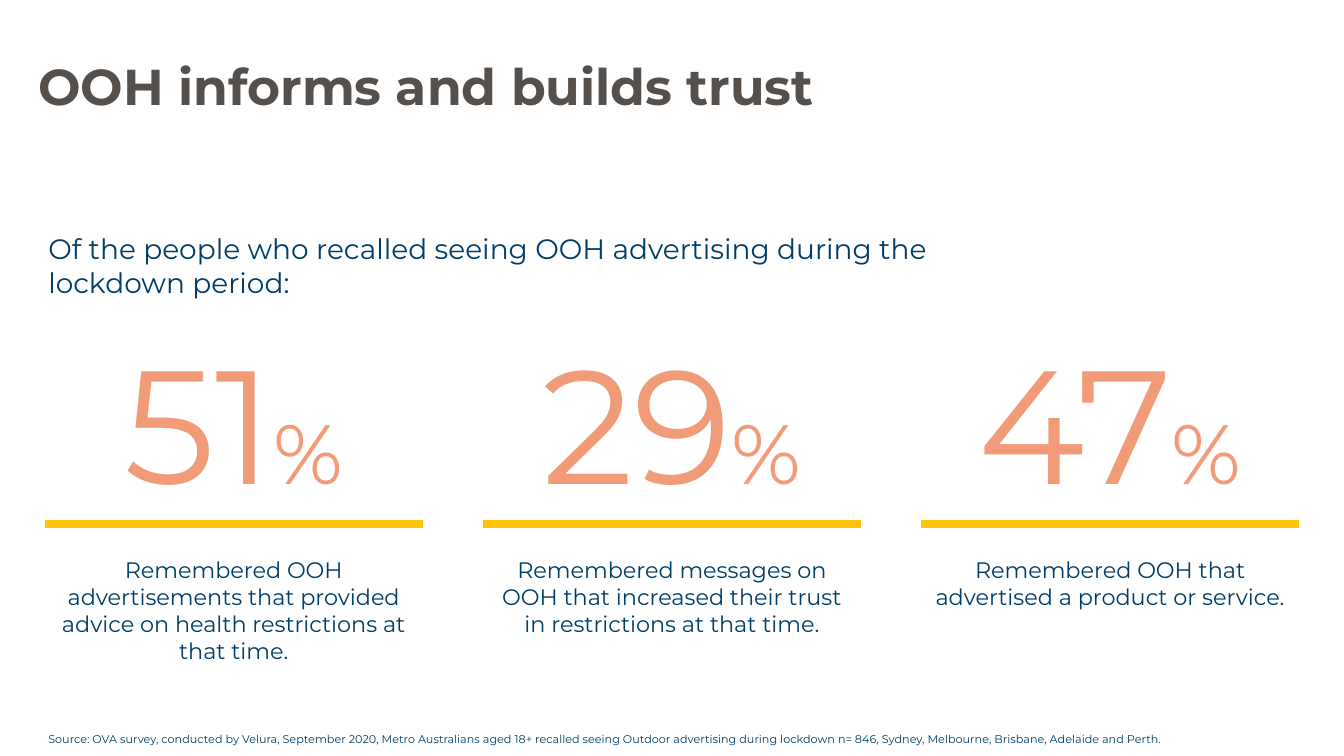
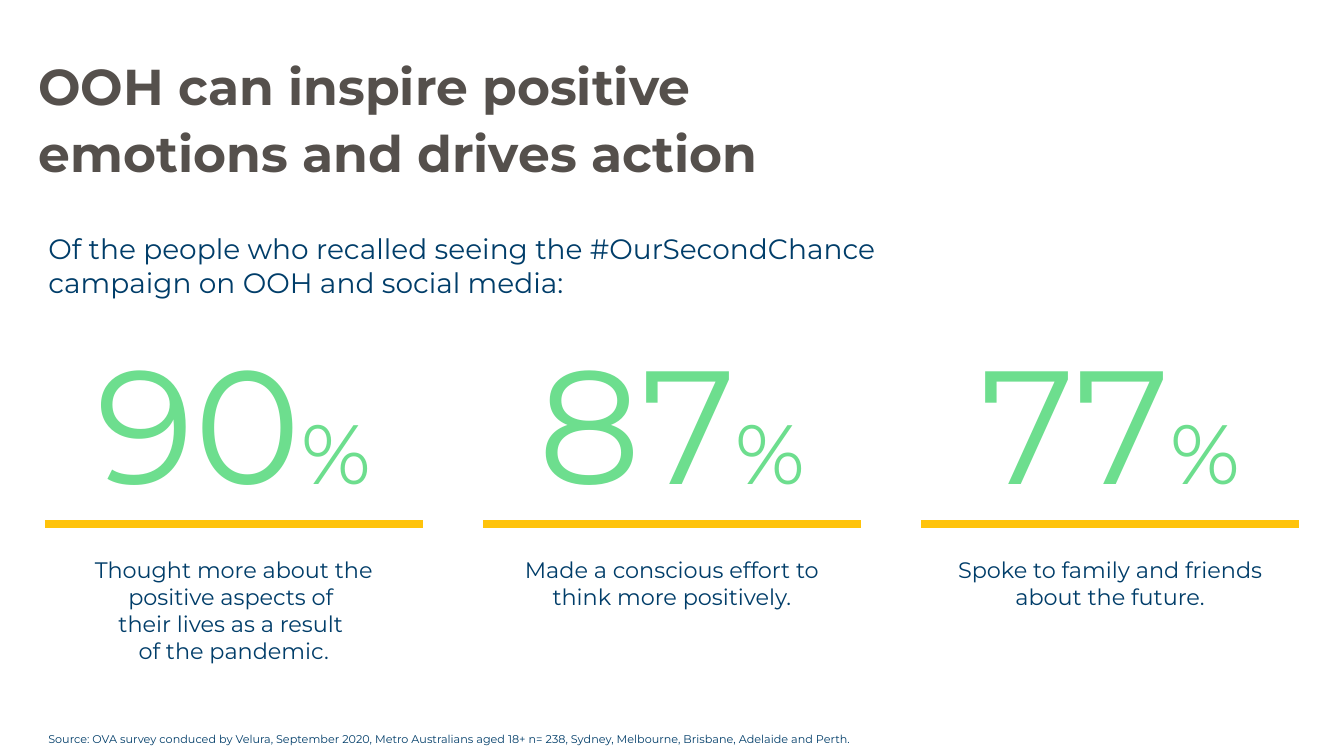
import copy
from dataclasses import dataclass

import pptx
import pptx.dml.color
import pptx.enum.shapes
import pptx.enum.text
import pptx.oxml.ns
import pptx.util
from lxml import etree

Pt = pptx.util.Pt
ALIGN = pptx.enum.text.PP_ALIGN


@dataclass(frozen=True)
class Theme:
    font: str = "Montserrat"
    title_color: str = "55504C"
    text_color: str = "003D69"
    rule_color: str = "FFC30B"
    coral: str = "F19B79"
    green: str = "6DDE8E"
    title_size: float = 36
    intro_size: float = 20
    caption_size: float = 16
    source_size: float = 8
    figure_size: float = 115
    percent_size: float = 60
    rule_width: float = 6


THEME = Theme()
PAGE_WIDTH, PAGE_HEIGHT = 960, 540
MARGIN, COLUMN_WIDTH = 32, 270

# Regions as left, top, width, height in points
TITLE_BOX = (27.4, 35.3, 618, 43)
INTRO_BOX = (27.4, 162, 658, 55.4)
SOURCE_BOX = (27.4, 519.3, 847, 17)
STATS_BOX = (MARGIN, 227.5, PAGE_WIDTH - 2 * MARGIN, 251.3)

# Offsets below the top of a statistic
FIGURE_HEIGHT = 147
CAPTION_TOP = 166.3

SLIDES = [
    {
        "title": "OOH informs and builds trust",
        "intro": "Of the people who recalled seeing OOH advertising during the lockdown period:",
        "accent": THEME.coral,
        "stats": [
            ("51", "Remembered OOH advertisements that provided advice on health restrictions at that time."),
            ("29", "Remembered messages on OOH that increased their trust in restrictions at that time."),
            ("47", "Remembered OOH that advertised a product or service."),
        ],
        "source": "Source: OVA survey, conducted by Velura, September 2020, Metro Australians aged 18+ "
                  "recalled seeing Outdoor advertising during lockdown n= 846, Sydney, Melbourne, "
                  "Brisbane, Adelaide and Perth.",
    },
    {
        "title": "OOH can inspire positive emotions and drives action",
        "intro": "Of the people who recalled seeing the #OurSecondChance campaign on OOH and social media:",
        "accent": THEME.green,
        "stats": [
            ("90", "Thought more about the positive aspects of \ntheir lives as a result \nof the pandemic."),
            ("87", "Made a conscious effort to think more positively."),
            ("77", "Spoke to family and friends about the future."),
        ],
        "source": "Source: OVA survey conduced by Velura, September 2020, Metro Australians aged 18+ "
                  "n= 238, Sydney, Melbourne, Brisbane, Adelaide and Perth.",
    },
]


def rgb(color):
    return pptx.dml.color.RGBColor.from_string(color)


def add_span(para, text, *, size, color, bold=False):
    """Add formatted text; a newline becomes a line break of the same size."""
    for index, line in enumerate(text.split("\n")):
        if index:
            para.add_line_break()
            para._p[-1].append(copy.deepcopy(span._r.get_or_add_rPr()))
        span = para.add_run()
        span.text = line
        span.font.name = THEME.font
        span.font.size = Pt(size)
        span.font.bold = bold
        span.font.color.rgb = rgb(color)


def add_text(shapes, region, text, *, size, color=THEME.text_color, bold=False,
             align=ALIGN.LEFT, spacing=None, inset=True):
    """Add a wrapping text box and return its paragraph."""
    box = shapes.add_textbox(*map(Pt, region))
    frame = box.text_frame
    frame.word_wrap = True
    if not inset:
        frame.margin_left = frame.margin_top = frame.margin_right = frame.margin_bottom = 0
    para = frame.paragraphs[0]
    para.alignment = align
    if spacing:
        para.line_spacing = spacing
    add_span(para, text, size=size, color=color, bold=bold)
    return para


def add_rule(shapes, left, top, width):
    rule = shapes.add_connector(pptx.enum.shapes.MSO_CONNECTOR.STRAIGHT,
                                Pt(left), Pt(top), Pt(left + width), Pt(top))
    rule.line.color.rgb = rgb(THEME.rule_color)
    rule.line.width = Pt(THEME.rule_width)
    etree.SubElement(rule._element.spPr, pptx.oxml.ns.qn("a:effectLst"))


def add_stat(page, region, figure, caption, accent):
    left, top, width, height = region
    # Figure and rule belong together
    group = page.shapes.add_group_shape()
    para = add_text(group.shapes, (left, top, width, FIGURE_HEIGHT), figure,
                    size=THEME.figure_size, color=accent, align=ALIGN.CENTER)
    add_span(para, "%", size=THEME.percent_size, color=accent)
    add_rule(group.shapes, left, top + FIGURE_HEIGHT, width)
    # Caption
    add_text(page.shapes, (left, top + CAPTION_TOP, width, height - CAPTION_TOP), caption,
             size=THEME.caption_size, align=ALIGN.CENTER)


def add_stats(page, region, stats, accent):
    """Spread the statistics over the region with equal gaps."""
    left, top, width, height = region
    pitch = (width - COLUMN_WIDTH) / (len(stats) - 1)
    for index, (figure, caption) in enumerate(stats):
        add_stat(page, (left + index * pitch, top, COLUMN_WIDTH, height), figure, caption, accent)


def add_stats_slide(deck, content):
    page = deck.slides.add_slide(deck.slide_layouts[6])
    add_text(page.shapes, TITLE_BOX, content["title"], size=THEME.title_size,
             color=THEME.title_color, bold=True, spacing=1.1, inset=False)
    add_text(page.shapes, INTRO_BOX, content["intro"], size=THEME.intro_size)
    add_stats(page, STATS_BOX, content["stats"], content["accent"])
    add_text(page.shapes, SOURCE_BOX, content["source"], size=THEME.source_size)


def main():
    deck = pptx.Presentation()
    deck.slide_width, deck.slide_height = Pt(PAGE_WIDTH), Pt(PAGE_HEIGHT)
    for content in SLIDES:
        add_stats_slide(deck, content)
    deck.save("out.pptx")


if __name__ == "__main__":
    main()
